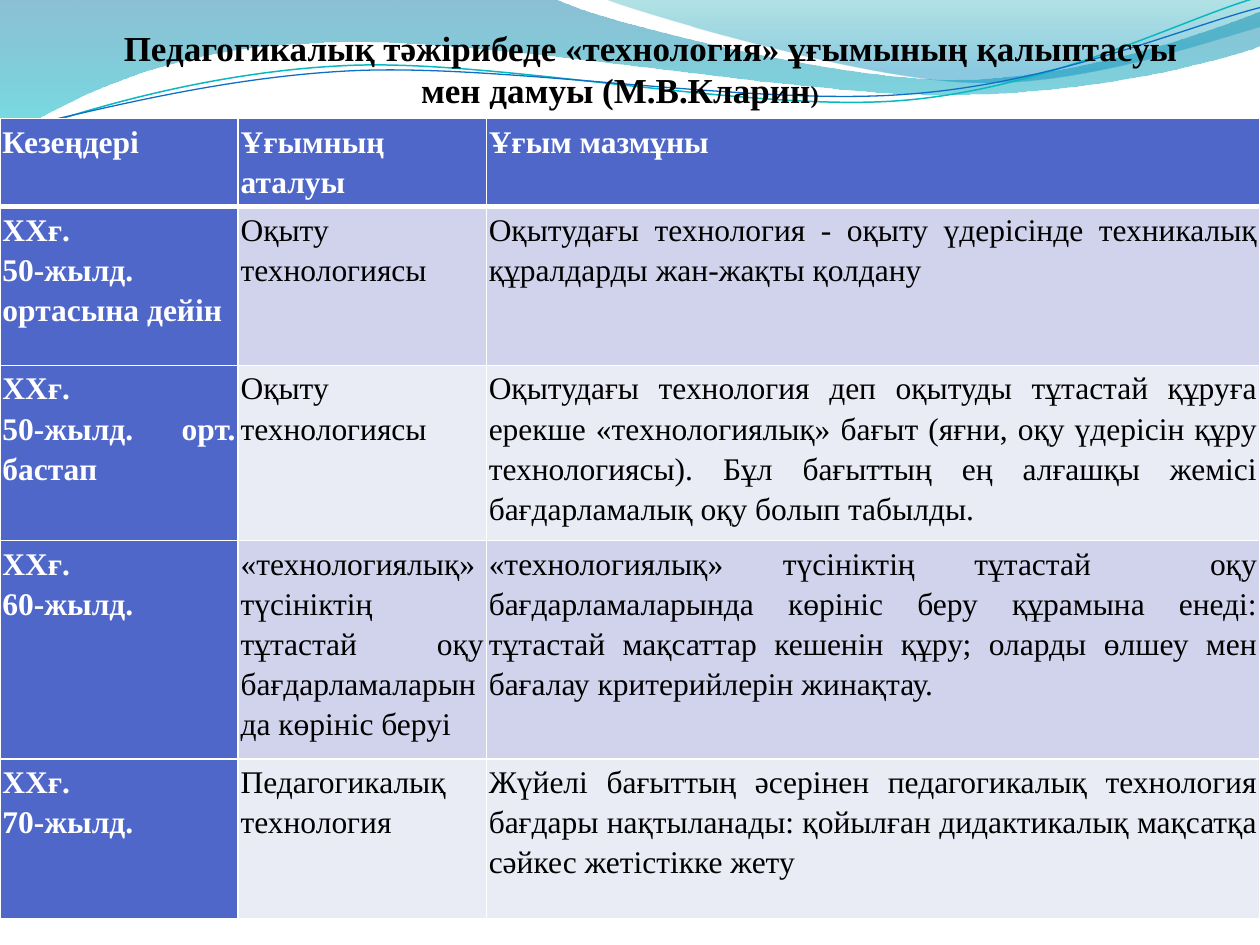
import math
import pptx
import pptx.util
import pptx.dml.color
import pptx.enum.text
import pptx.oxml
import pptx.oxml.ns
from dataclasses import dataclass
from lxml import etree

Inches, Pt = pptx.util.Inches, pptx.util.Pt
Align, Anchor = pptx.enum.text.PP_ALIGN, pptx.enum.text.MSO_ANCHOR
qn = pptx.oxml.ns.qn


@dataclass(frozen=True)
class Theme:
    face: str = "Times New Roman"
    dark: str = "000000"
    light: str = "FFFFFF"
    head: str = "4E67C8"
    bands: tuple = ("D0D3EB", "E9EBF5")
    teal: str = "0AB8BF"
    blue: str = "0F6FC6"
    title: int = 20
    small: int = 14
    body: int = 18


THEME = Theme()
TILT = 357.3

# Each wave: its box, then a start point and steps of 2 (line) or 6 (curve) numbers.
# Gradient stops: place, colour, opacity in percent.
BANDS = [
    ((-0.01, -0.01, 10.02, 1.14),
     [(0, 0), (4.4, -0.01), (4.76, 0.17, 6.64, 0.63, 7.58, 0.63),
      (8.53, 0.63, 9.58, 0.26, 10, 0.09), (10.01, 0.36),
      (9.83, 0.44, 8.7, 0.76, 7.46, 0.75), (6.22, 0.75, 3.82, 0.28, 2.57, 0.34),
      (1.29, 0.36, 0.46, 0.83, -0.01, 1.13), (0, 0)],
     [(0, "0074A1", 45), (1, "00C6CF", 55)]),
    ((4.79, -0.01, 5.21, 0.7),
     [(4.79, -0.01), (5.09, 0.11, 6.82, 0.62, 7.69, 0.65),
      (8.56, 0.69, 9.61, 0.32, 10, 0.21), (10, 0), (4.79, -0.01)],
     [(0, "00A1A9", 30), (0.8, "008BBF", 45)]),
]
CURVES = [
    ((-0.02, 0.22, 10.02, 0.71),
     [(0, 1.11), (0.48, 0.93, 1.58, 0.57, 2.77, 0.52),
      (3.95, 0.47, 5.93, 0.89, 7.13, 0.8), (8.33, 0.71, 9.38, 0.15, 9.98, -0.02)],
     THEME.teal, 0.85),
    ((-0.02, 0.3, 10.03, 0.58),
     [(0, 1.04), (0.47, 0.96, 1.64, 0.61, 2.83, 0.56),
      (4.03, 0.51, 5.97, 0.84, 7.17, 0.75), (8.36, 0.67, 9.41, 0.21, 10, 0.06)],
     THEME.blue, 0.75),
]

COLS = [1.89, 1.97, 6.14]
ROWS = [0.67, 1.26, 1.34, 1.71, 1.27]
CELLS = [
    ["Кезеңдері", "Ұғымның аталуы", "Ұғым мазмұны"],
    ["ХХғ.\n50-жылд. ортасына дейін", "Оқыту технологиясы",
     "Оқытудағы технология - оқыту үдерісінде техникалық құралдарды "
     "жан-жақты қолдану"],
    ["ХХғ.\n50-жылд. орт. бастап", "Оқыту технологиясы",
     "Оқытудағы технология деп оқытуды тұтастай құруға ерекше "
     "«технологиялық» бағыт (яғни, оқу үдерісін құру технологиясы). "
     "Бұл бағыттың ең алғашқы жемісі бағдарламалық оқу болып табылды."],
    ["ХХғ.\n60-жылд.",
     "«технологиялық» түсініктің тұтастай  оқу бағдарламаларында көрініс беруі",
     "«технологиялық» түсініктің тұтастай  оқу бағдарламаларында көрініс "
     "беру құрамына енеді: тұтастай мақсаттар кешенін құру; оларды өлшеу "
     "мен бағалау критерийлерін жинақтау."],
    ["ХХғ.\n70-жылд.", "Педагогикалық технология",
     "Жүйелі бағыттың әсерінен педагогикалық технология бағдары "
     "нақтыланады: қойылған дидактикалық мақсатқа сәйкес жетістікке жету"],
]


def rgb(code):
    return pptx.dml.color.RGBColor.from_string(code)


def apply(item, form):
    for key, value in form.items():
        setattr(item, key, value)


def style(font, size, color, bold):
    apply(font, {"name": THEME.face, "size": Pt(size), "bold": bold})
    font.color.rgb = rgb(color)


def outline(slide, box, steps, close, turn=0):
    """Draw lines and Bezier curves in a box that is turned about its middle."""
    left, top, width, height = box
    angle = math.radians(-turn)

    def local(x, y):
        dx, dy = x - left - width / 2, y - top - height / 2
        return (Inches(dx * math.cos(angle) - dy * math.sin(angle) + width / 2),
                Inches(dx * math.sin(angle) + dy * math.cos(angle) + height / 2))

    spots = [[local(*step[i:i + 2]) for i in range(0, len(step), 2)] for step in steps]
    pen = slide.shapes.build_freeform(*spots[0][0], scale=1.0)
    pen.add_line_segments([spot[-1] for spot in spots[1:]], close=close)
    shape = pen.convert_to_shape()
    apply(shape, dict(zip(("left", "top", "width", "height"), map(Inches, box))))
    shape.rotation = turn
    shape.shadow.inherit = False

    # Place the path in the box and bend its curved parts
    track = next(shape._element.iter(qn("a:path")))
    track.set("w", str(Inches(width)))
    track.set("h", str(Inches(height)))
    for part, spot in zip(list(track), spots):
        if len(spot) == 3:
            part.tag = qn("a:cubicBezTo")
        for mark in list(part):
            part.remove(mark)
        for x, y in spot:
            etree.SubElement(part, qn("a:pt"), x=str(x), y=str(y))
    return shape


def shade(fill, stops):
    fill.gradient()
    fill.gradient_angle = 270
    for stop, (place, color, alpha) in zip(fill.gradient_stops, stops):
        stop.position = place
        stop.color.rgb = rgb(color)
        mark = next(stop._gs.iter(qn("a:srgbClr")))
        etree.SubElement(mark, qn("a:alpha"), val=str(alpha * 1000))


def add_waves(slide):
    # Shaded bands
    for box, steps, stops in BANDS:
        shape = outline(slide, box, steps, True)
        shape.line.fill.background()
        shade(shape.fill, stops)
    # Thin curves
    for box, steps, color, width in CURVES:
        shape = outline(slide, box, steps, False, TILT)
        shape.fill.background()
        shape.line.color.rgb = rgb(color)
        shape.line.width = Pt(width)


def add_title(slide, box):
    frame = slide.shapes.add_textbox(*map(Inches, box)).text_frame
    apply(frame, {"word_wrap": True, "vertical_anchor": Anchor.MIDDLE,
                  "auto_size": pptx.enum.text.MSO_AUTO_SIZE.SHAPE_TO_FIT_TEXT})
    para = frame.paragraphs[0]
    para.alignment = Align.CENTER
    props = para._p.get_or_add_pPr()
    props.set("marL", "0")
    props.set("indent", str(Inches(0.49)))
    for text, size in [
            ("Педагогикалық тәжірибеде «технология» ұғымының қалыптасуы "
             "мен дамуы (М.В.Кларин", THEME.title), (")", THEME.small)]:
        run = para.add_run()
        run.text = text
        style(run.font, size, THEME.dark, True)


def set_edges(cell, widths):
    props = cell._tc.get_or_add_tcPr()
    for side, width in widths.items():
        edge = etree.SubElement(props, qn("a:ln" + side), w=str(Pt(width)))
        fill = etree.SubElement(edge, qn("a:solidFill"))
        etree.SubElement(fill, qn("a:srgbClr"), val=THEME.light)


def add_grid(slide, box):
    table = slide.shapes.add_table(len(ROWS), len(COLS), *map(Inches, box)).table
    for col, width in zip(table.columns, COLS):
        col.width = Inches(width)
    for row, height in zip(table.rows, ROWS):
        row.height = Inches(height)
    form = {"margin_left": Inches(0.02), "margin_right": Inches(0.02),
            "margin_top": Inches(0.01), "margin_bottom": 0}
    for r, texts in enumerate(CELLS):
        for c, text in enumerate(texts):
            cell = table.cell(r, c)
            head = r == 0 or c == 0
            apply(cell, form)
            set_edges(cell, {"L": 1, "R": 1, "T": 3 if r == 1 else 1,
                             "B": 3 if r == 0 else 1})
            cell.fill.solid()
            cell.fill.fore_color.rgb = rgb(THEME.head if head else THEME.bands[(r - 1) % 2])
            cell.text = text
            for para in cell.text_frame.paragraphs:
                apply(para, {"alignment": Align.JUSTIFY, "line_spacing": 1.15})
                for run in para.runs:
                    style(run.font, THEME.body, THEME.light if head else THEME.dark, head)


def main():
    deck = pptx.Presentation()
    apply(deck, {"slide_width": Inches(10), "slide_height": Inches(7.5)})
    slide = deck.slides.add_slide(deck.slide_layouts[6])
    add_waves(slide)
    add_title(slide, (0.31, 0.16, 9.22, 0.77))
    add_grid(slide, (0, 0.94, 10, sum(ROWS)))
    deck.save("out.pptx")


if __name__ == "__main__":
    main()
